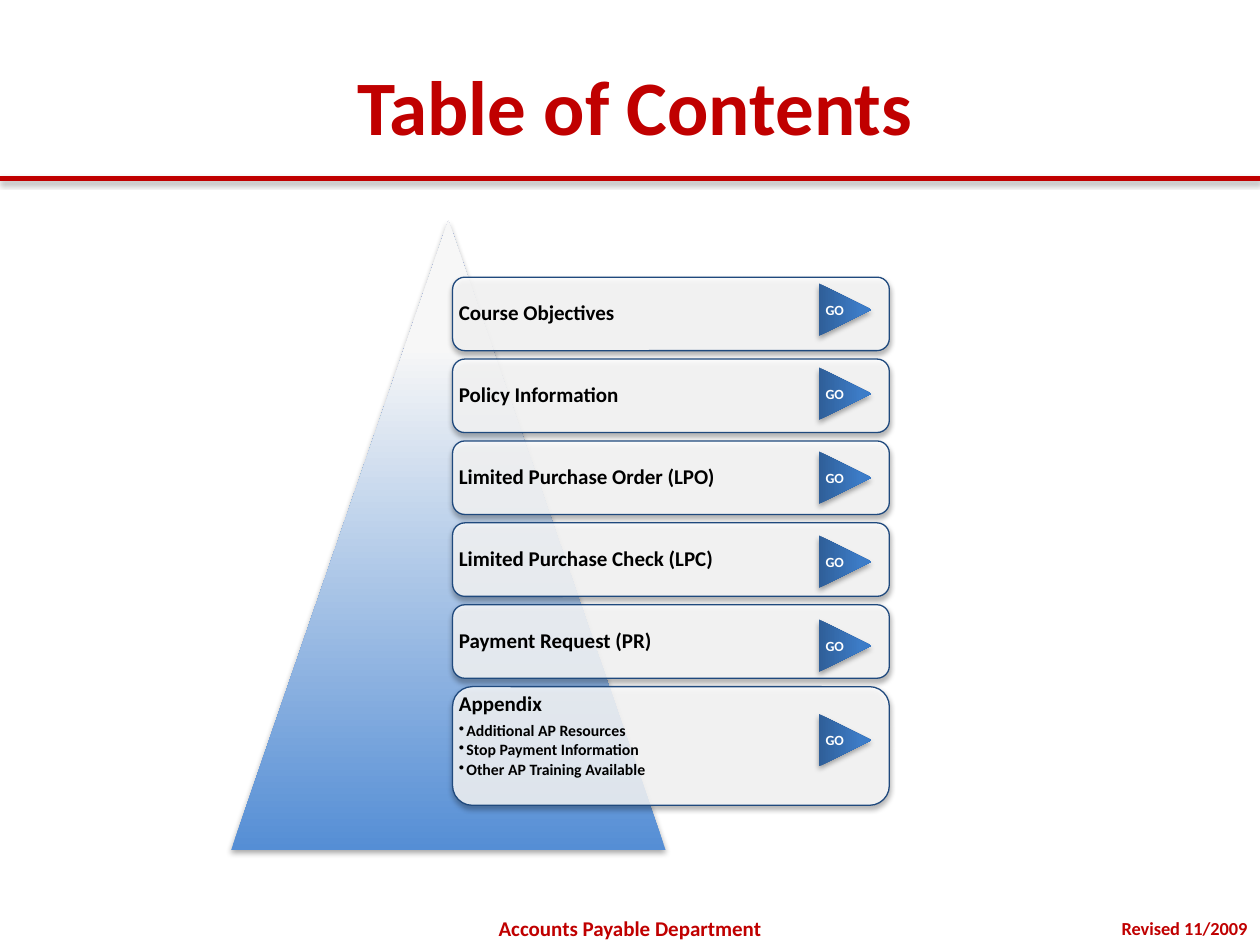
from lxml.etree import SubElement
from pptx import Presentation
from pptx.dml.color import RGBColor
from pptx.enum.shapes import MSO_CONNECTOR, MSO_SHAPE
from pptx.enum.text import MSO_ANCHOR as ANCHOR, PP_ALIGN as ALIGN
from pptx.oxml.ns import qn
from pptx.util import Emu, Inches, Pt

RED = RGBColor(0xC0, 0x00, 0x00)
NAVY = RGBColor(0x1F, 0x49, 0x7D)
BLACK = RGBColor(0x00, 0x00, 0x00)
WHITE = RGBColor(0xFF, 0xFF, 0xFF)
PYRAMID_STOPS = [(0, RGBColor(0x55, 0x8E, 0xD5)), (80, RGBColor(0xF7, 0xF7, 0xF7)),
                 (100, RGBColor(0xF8, 0xF8, 0xF8))]
BUTTON_STOPS = [(0, RGBColor(0x2F, 0x5F, 0x99)), (80, RGBColor(0x3D, 0x7C, 0xC7)),
                (100, RGBColor(0x3A, 0x7C, 0xCB))]

FONT = "Calibri"
WIDTH, HEIGHT = Inches(10), Inches(7.5)
UNIT = WIDTH / 120  # the grid has 120 columns and 90 rows

TOPICS = ["Course Objectives", "Policy Information", "Limited Purchase Order (LPO)",
          "Limited Purchase Check (LPC)", "Payment Request (PR)"]
APPENDIX = ["Additional AP Resources", "Stop Payment Information",
            "Other AP Training Available"]
BOX_LEFT, BOX_TOP, BOX_WIDTH, BOX_HEIGHT, BOX_PITCH = 43.1, 26.4, 41.6, 7, 7.8
APPENDIX_HEIGHT = 11.3
BUTTON_TOP, BUTTON_PITCH, APPENDIX_BUTTON_TOP = 27, 8, 68


def grid(*cells):
    return [Emu(round(c * UNIT)) for c in cells]


def add_shadow(s):
    effects = SubElement(s._element.spPr, qn("a:effectLst"))
    shadow = SubElement(effects, qn("a:outerShdw"), blurRad=str(Pt(3.1)),
                        dist=str(Pt(1.8)), dir="5400000", rotWithShape="0")
    color = SubElement(shadow, qn("a:srgbClr"), val="000000")
    SubElement(color, qn("a:alpha"), val="35000")


def write(tf, text, size, color, align=ALIGN.LEFT, first=True, bullet=False,
          spacing=None, after=None):
    """Write one bold paragraph, in the first one or a new one."""
    p = tf.paragraphs[0] if first else tf.add_paragraph()
    p.alignment = align
    if spacing:
        p.line_spacing = spacing
    if after:
        p.space_after = Pt(after)
    if bullet:
        p.level = 1
        pPr = p._p.get_or_add_pPr()
        pPr.set("marL", str(Inches(0.06)))
        pPr.set("indent", str(-Inches(0.06)))
        SubElement(pPr, qn("a:buChar"), char="•")
    r = p.add_run()
    r.text = text
    f = r.font
    f.name, f.size, f.bold, f.color.rgb = FONT, Pt(size), True, color


def set_frame(tf, anchor, inset=None):
    tf.word_wrap = True
    tf.vertical_anchor = anchor
    if inset is not None:
        tf.margin_left = tf.margin_right = tf.margin_top = tf.margin_bottom = Inches(inset)


def add_text_box(slide, cells, anchor=ANCHOR.MIDDLE, inset=None):
    tf = slide.shapes.add_textbox(*grid(*cells)).text_frame
    set_frame(tf, anchor, inset)
    return tf


def add_triangle(slide, cells, stops):
    """Add a triangle with a gradient that runs from its base to its tip."""
    s = slide.shapes.add_shape(MSO_SHAPE.ISOSCELES_TRIANGLE, *grid(*cells))
    s.fill.gradient()
    s.fill.gradient_angle = 90
    stop_list = s._element.spPr.find(qn("a:gradFill")).find(qn("a:gsLst"))
    stop_list.clear()
    for position, color in stops:
        stop = SubElement(stop_list, qn("a:gs"), pos=str(position * 1000))
        SubElement(stop, qn("a:srgbClr"), val=str(color))
    s.line.fill.background()
    add_shadow(s)
    return s


def add_box(slide, top, height, anchor=ANCHOR.MIDDLE):
    """Add a translucent rounded box and return the text frame over it."""
    cells = BOX_LEFT, top, BOX_WIDTH, height
    s = slide.shapes.add_shape(MSO_SHAPE.ROUNDED_RECTANGLE, *grid(*cells))
    s.fill.solid()
    s.fill.fore_color.rgb = WHITE
    color = s._element.spPr.find(qn("a:solidFill")).find(qn("a:srgbClr"))
    SubElement(color, qn("a:alpha"), val="82000")
    s.line.color.rgb = NAVY
    s.line.width = Pt(0.75)
    add_shadow(s)
    return add_text_box(slide, cells, anchor, 0.05)


def add_go_button(slide, top):
    s = add_triangle(slide, (78, top, 5, 5), BUTTON_STOPS)
    s.rotation = 90
    tf = s.text_frame
    set_frame(tf, ANCHOR.MIDDLE, 0.01)
    tf._txBody.bodyPr.set("vert", "vert270")
    write(tf, "GO", 8, WHITE, align=ALIGN.RIGHT)


def add_rule(slide, row):
    x1, y, x2 = grid(0, row, 120)
    line = slide.shapes.add_connector(MSO_CONNECTOR.STRAIGHT, x1, y, x2, y)
    line.line.color.rgb = RED
    line.line.width = Pt(3)
    add_shadow(line)


def main():
    prs = Presentation()
    prs.slide_width, prs.slide_height = WIDTH, HEIGHT
    slide = prs.slides.add_slide(prs.slide_layouts[6])

    write(add_text_box(slide, (4, 5, 113, 10)), "Table of Contents", 44, RED,
          align=ALIGN.CENTER)
    add_triangle(slide, (22, 21, 41.4, 60), PYRAMID_STOPS)

    for i, topic in enumerate(TOPICS):
        tf = add_box(slide, BOX_TOP + i * BOX_PITCH, BOX_HEIGHT)
        write(tf, topic, 12, BLACK, spacing=0.9)
    tf = add_box(slide, BOX_TOP + len(TOPICS) * BOX_PITCH, APPENDIX_HEIGHT, ANCHOR.TOP)
    write(tf, "Appendix", 12, BLACK, spacing=0.9, after=4.2)
    for item in APPENDIX:
        write(tf, item, 9, BLACK, first=False, bullet=True, spacing=0.9, after=1.35)

    add_rule(slide, 17)
    write(add_text_box(slide, (92, 86.8, 28, 3.2)), "Revised 11/2009", 10.5, RED,
          align=ALIGN.RIGHT)
    write(add_text_box(slide, (41, 86.8, 38, 3.2)), "Accounts Payable Department", 12, RED,
          align=ALIGN.CENTER)

    for i in range(len(TOPICS)):
        add_go_button(slide, BUTTON_TOP + i * BUTTON_PITCH)
    add_go_button(slide, APPENDIX_BUTTON_TOP)

    prs.save("out.pptx")


if __name__ == "__main__":
    main()
